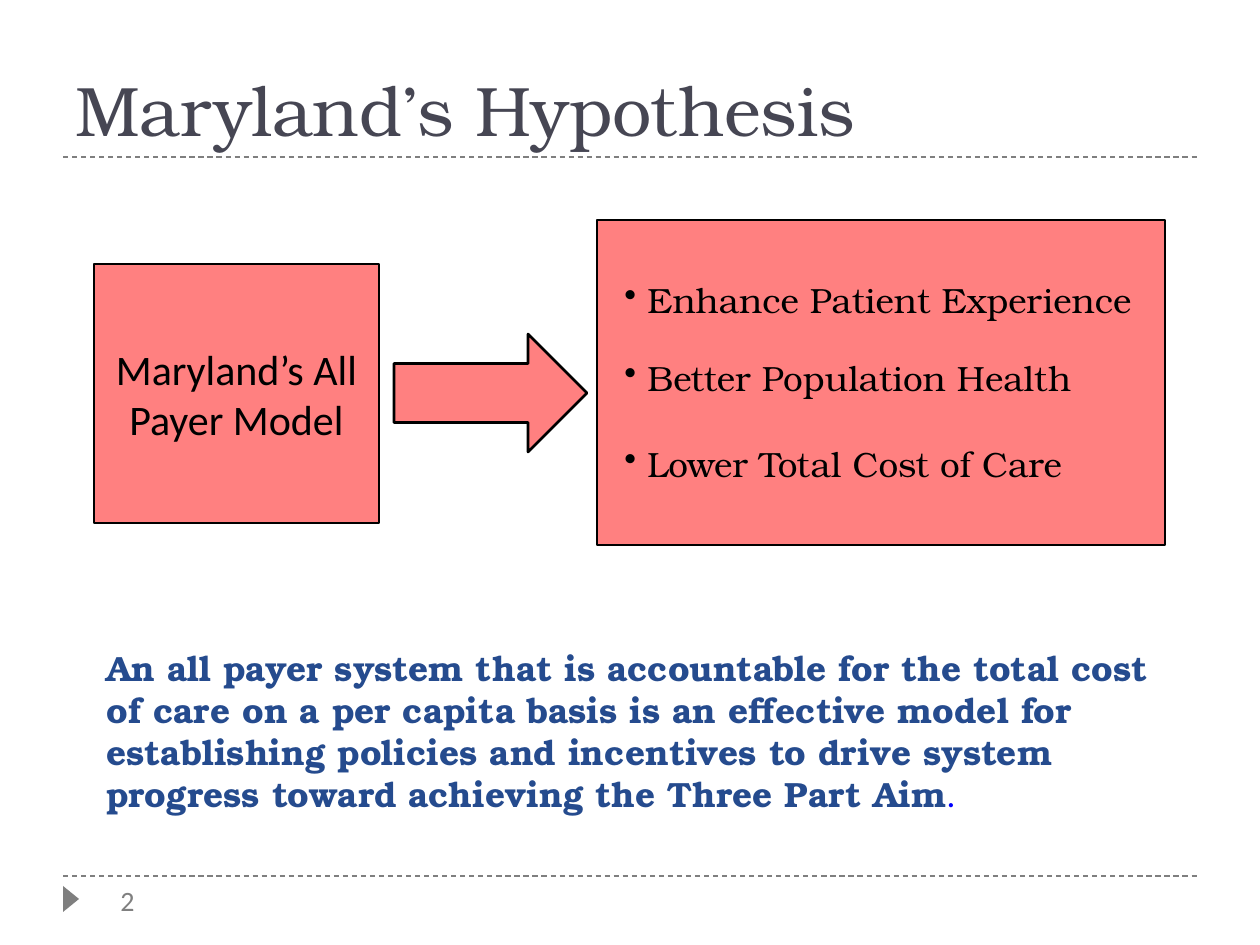
from lxml import etree
from pptx import Presentation
from pptx.dml.color import RGBColor
from pptx.enum.dml import MSO_LINE
from pptx.enum.shapes import MSO_CONNECTOR, MSO_SHAPE
from pptx.enum.text import MSO_ANCHOR, PP_ALIGN
from pptx.oxml.ns import qn
from pptx.util import Pt

PX = 914400 / 126
SERIF, SANS = "TeX Gyre Bonum", "Calibri"
COLORS = {
    "title": "464653",
    "rule": "7F7F7F",
    "number": "808080",
    "box": "FF8080",
    "ink": "000000",
    "claim": "254B8E",
    "period": "0000FF",
}
RECT, ARROW = MSO_SHAPE.RECTANGLE, MSO_SHAPE.RIGHT_ARROW
TRIANGLE = MSO_SHAPE.ISOSCELES_TRIANGLE
STRAIGHT, DASH = MSO_CONNECTOR.STRAIGHT, MSO_LINE.DASH
LEFT, CENTER = PP_ALIGN.LEFT, PP_ALIGN.CENTER
TOP, MIDDLE, BOTTOM = MSO_ANCHOR.TOP, MSO_ANCHOR.MIDDLE, MSO_ANCHOR.BOTTOM


def px(*lengths):
    return [round(length * PX) for length in lengths]


def rgb(name):
    return RGBColor.from_string(COLORS[name])


def add_run(paragraph, text, size, font, color, bold=False):
    run = paragraph.add_run()
    run.text = text
    run.font.size = Pt(size)
    run.font.name = font
    run.font.bold = bold
    run.font.color.rgb = rgb(color)


def set_frame(frame, anchor=TOP, align=LEFT, wrap=True):
    frame.word_wrap = wrap
    frame.vertical_anchor = anchor
    paragraph = frame.paragraphs[0]
    paragraph.alignment = align
    return paragraph


def add_text(slide, box, wrap=True):
    return set_frame(slide.shapes.add_textbox(*px(*box)).text_frame, wrap=wrap)


def add_bullet(paragraph, indent):
    properties = paragraph._p.get_or_add_pPr()
    width, = px(indent)
    properties.set("marL", str(width))
    properties.set("indent", str(-width))
    etree.SubElement(properties, qn("a:buChar")).set("char", "•")


def add_block(slide, kind, box, fill="box", outline="ink"):
    block = slide.shapes.add_shape(kind, *px(*box))
    block.shadow.inherit = False
    block.fill.solid()
    block.fill.fore_color.rgb = rgb(fill)
    if outline:
        block.line.color.rgb = rgb(outline)
        block.line.width = Pt(1.5)
    else:
        block.line.fill.background()
    return block


def add_rule(slide, y):
    rule = slide.shapes.add_connector(STRAIGHT, *px(63, y, 1197, y))
    rule.line.color.rgb = rgb("rule")
    rule.line.width = Pt(0.75)
    rule.line.dash_style = DASH
    etree.SubElement(rule._element.spPr, qn("a:effectLst"))


def add_title(slide, text, box):
    title = slide.shapes.title
    title.left, title.top, title.width, title.height = px(*box)
    add_run(set_frame(title.text_frame, BOTTOM), text, 40, SERIF, "title")


def main():
    prs = Presentation()
    prs.slide_width, prs.slide_height = px(1260, 945)
    slide = prs.slides.add_slide(prs.slide_layouts[5])

    # Title and page furniture
    for y in (876, 157):
        add_rule(slide, y)
    marker = add_block(slide, TRIANGLE, (58, 891, 26, 16), "rule", None)
    marker.rotation = 90
    number = add_text(slide, (108, 877, 59, 47), wrap=False)
    add_run(number, "2", 16, SANS, "number")
    add_title(slide, "Maryland’s Hypothesis", (63, 21, 1134, 136))

    # Three aims
    add_block(slide, RECT, (597, 220, 568, 325))
    aims = [
        ("Enhance Patient Experience", 272),
        ("Better Population Health", 350),
        ("Lower Total Cost of Care", 436),
    ]
    for aim, top in aims:
        paragraph = add_text(slide, (612, top, 564, 57))
        add_bullet(paragraph, 23)
        add_run(paragraph, aim, 20, SERIF, "ink")

    # Model leading to the aims
    model = add_block(slide, RECT, (94, 264, 285, 259))
    add_run(set_frame(model.text_frame, MIDDLE, CENTER),
            "Maryland’s All Payer Model", 24, SANS, "ink")
    add_block(slide, ARROW, (394, 334, 193, 118))

    # Hypothesis
    claim = add_text(slide, (94, 640, 1071, 168))
    add_run(claim, "An all payer system that is accountable for the total cost "
            "of care on a per capita basis is an effective model for "
            "establishing policies and incentives to drive system progress "
            "toward achieving the Three Part Aim", 20, SERIF, "claim", True)
    add_run(claim, ".", 20, SANS, "period")

    prs.save("out.pptx")


if __name__ == "__main__":
    main()
